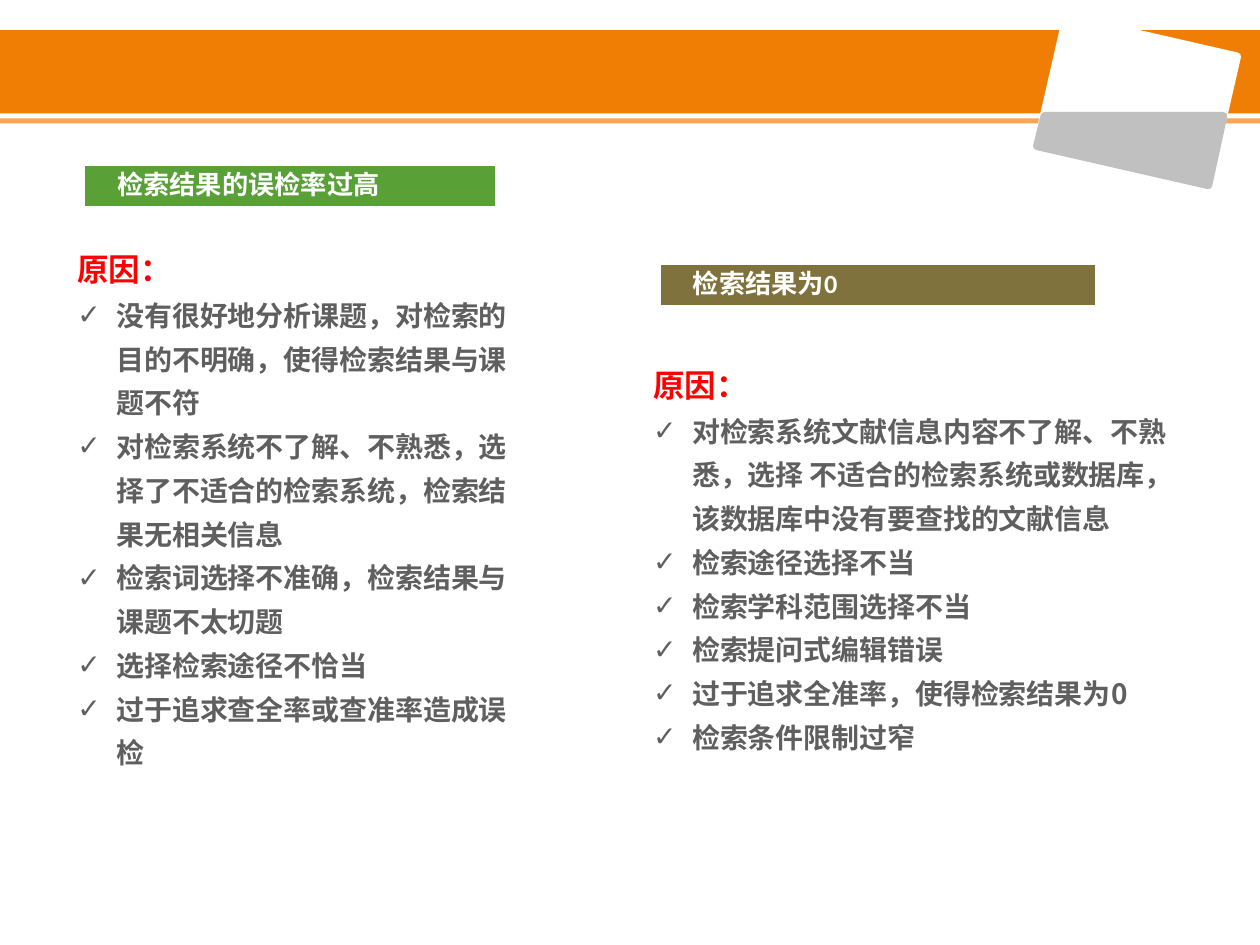
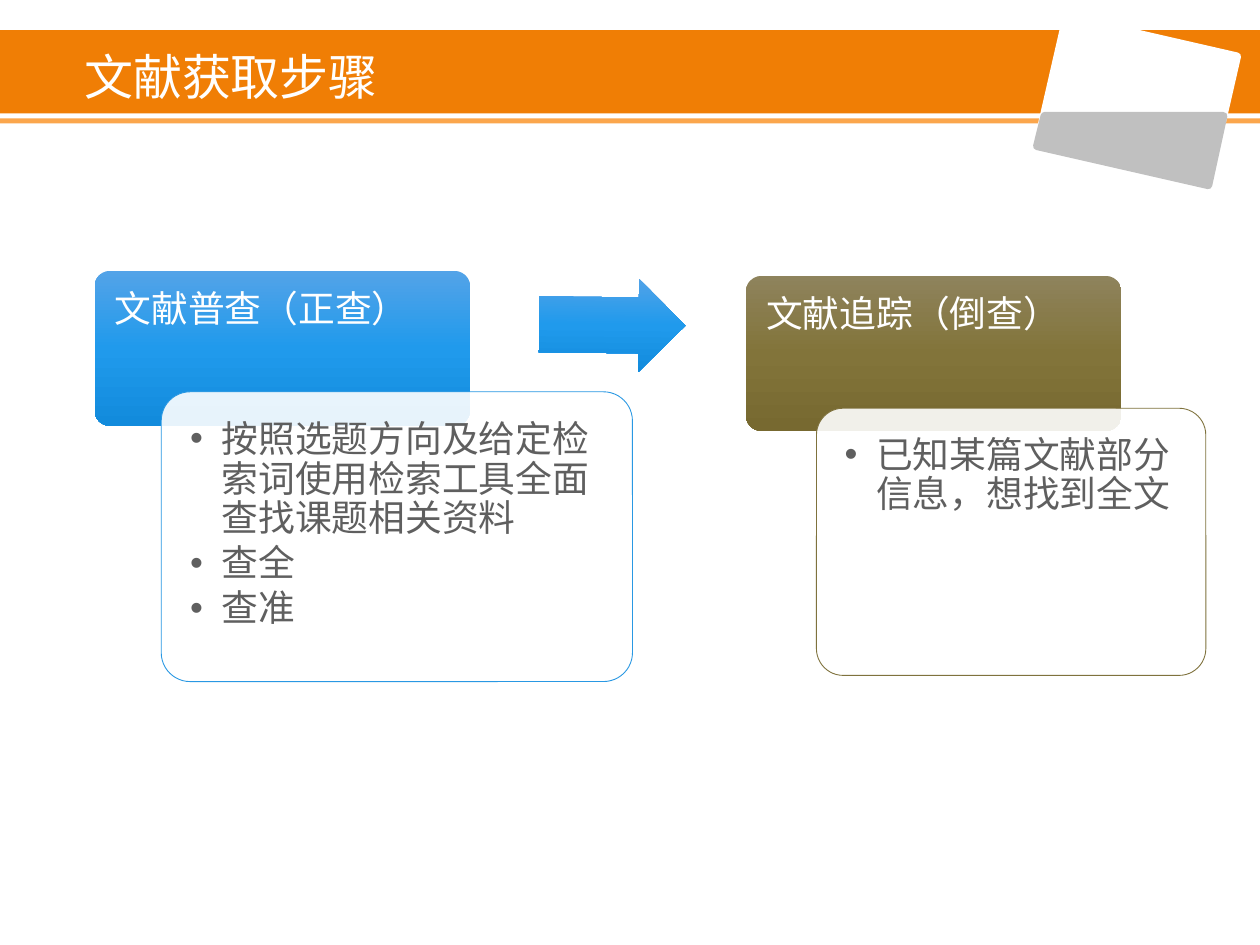
from copy import deepcopy
from lxml.etree import SubElement
from pptx import Presentation
from pptx.dml.color import RGBColor
from pptx.enum.shapes import MSO_SHAPE
from pptx.enum.text import MSO_ANCHOR, MSO_AUTO_SIZE
from pptx.oxml.ns import qn
from pptx.util import Inches, Pt

# Grid of 100 columns by 75 rows
COLS, ROWS = 100, 75
WIDE, HIGH = Inches(10), Inches(7.5)

WHITE = RGBColor(0xFF, 0xFF, 0xFF)
ORANGE = RGBColor(0xF0, 0x7E, 0x05)
PEACH = RGBColor(0xFB, 0xA6, 0x4C)
SILVER = RGBColor(0xC0, 0xC0, 0xC0)
GREEN = RGBColor(0x59, 0xA0, 0x37)
OLIVE = RGBColor(0x7F, 0x72, 0x3D)
BLUE = RGBColor(0x29, 0x98, 0xE3)
RED = RGBColor(0xFF, 0x00, 0x00)
GRAY = RGBColor(0x5F, 0x5F, 0x5F)
SKIES = [RGBColor(0x53, 0xA3, 0xE8), RGBColor(0x20, 0x9A, 0xEC),
         RGBColor(0x12, 0x8B, 0xDC)]
EARTHS = [RGBColor(0x8E, 0x83, 0x5C), RGBColor(0x82, 0x74, 0x3A),
          RGBColor(0x77, 0x69, 0x30)]

LATIN, SERIF, HAN = "Calibri", "Times New Roman", "Noto Sans CJK SC"


def place(box):
    """Turn grid columns and rows into slide lengths."""
    x, y, w, h = box
    return (round(x * WIDE / COLS), round(y * HIGH / ROWS),
            round(w * WIDE / COLS), round(h * HIGH / ROWS))


def paint(shape, fill, line=None, width=1, alpha=None):
    """Fill with one colour or a list of them, and set the outline."""
    shape.shadow.inherit = False
    if isinstance(fill, list):
        blend(shape, fill)
    else:
        shape.fill.solid()
        shape.fill.fore_color.rgb = fill
    if alpha:
        hue = shape.element.spPr.find(qn("a:solidFill"))[0]
        SubElement(hue, qn("a:alpha")).set("val", str(alpha * 1000))
    if line is None:
        shape.line.fill.background()
    else:
        shape.line.color.rgb = line
        shape.line.width = Pt(width)
    return shape


def blend(shape, hues):
    """Fill from top to bottom with evenly spaced colours."""
    shape.fill.gradient()
    shape.fill.gradient_angle = 270
    stops = shape.element.spPr.find(qn("a:gradFill")).find(qn("a:gsLst"))
    while len(stops) < len(hues):
        stops.append(deepcopy(stops[-1]))
    for i, (stop, hue) in enumerate(zip(shape.fill.gradient_stops, hues)):
        stop.color.rgb = hue
        stop.position = i / (len(hues) - 1)


def draw(slide, kind, box, fill, adjust=(), turn=0, **look):
    shape = slide.shapes.add_shape(kind, *place(box))
    for i, value in enumerate(adjust):
        shape.adjustments[i] = value
    shape.rotation = turn
    return paint(shape, fill, **look)


def frame(slide, box, inset=(1, 0.5, 1, 0.5), anchor=MSO_ANCHOR.TOP, grow=False):
    """Add an empty text box with its insets in grid units."""
    text = slide.shapes.add_textbox(*place(box)).text_frame
    text.word_wrap = True
    text.vertical_anchor = anchor
    text.auto_size = (MSO_AUTO_SIZE.SHAPE_TO_FIT_TEXT if grow
                      else MSO_AUTO_SIZE.NONE)
    left, top, right, low = (Inches(n / 10) for n in inset)
    text.margin_left, text.margin_top = left, top
    text.margin_right, text.margin_bottom = right, low
    return text


def write(text, words, size, color, font=LATIN, bold=False, lead=0.9,
          after=0, bullet=None, indent=0, level=0):
    """Add one paragraph to a text frame."""
    first = text.paragraphs[0]
    para = text.add_paragraph() if first.runs else first
    para.level = level
    para.line_spacing = lead
    para.space_after = Pt(after)
    if bullet:
        props = para._p.get_or_add_pPr()
        props.set("marL", str(Inches(indent)))
        props.set("indent", str(-Inches(indent)))
        SubElement(props, qn("a:buFont")).set("typeface", "Arial")
        SubElement(props, qn("a:buChar")).set("char", bullet)
    run = para.add_run()
    run.text = words
    run.font.size, run.font.bold = Pt(size), bold
    run.font.name, run.font.color.rgb = font, color
    SubElement(run._r.get_or_add_rPr(), qn("a:ea")).set("typeface", HAN)


def banner(slide, title=None):
    """Draw the shared header, with its title if there is one."""
    draw(slide, MSO_SHAPE.RECTANGLE, (0, 9.4, COLS, 0.4), PEACH)
    draw(slide, MSO_SHAPE.PENTAGON, (0, 2.4, COLS, 6.6), ORANGE, adjust=[0])
    # Tilted tile and its lower half
    draw(slide, MSO_SHAPE.RECTANGLE, (83.3, 2.8, 13.9, 10.4), WHITE,
         turn=12.9, line=WHITE, width=4.5)
    edge = [place((x, y, 0, 0))[:2] for x, y in
            ((82.9, 9.2), (97.1, 9.2), (95.9, 14.7), (82.3, 11.6))]
    half = slide.shapes.build_freeform(*edge[0])
    half.add_line_segments(edge[1:], close=True)
    paint(half.convert_to_shape(), SILVER, line=SILVER, width=4.5)
    if title:
        text = frame(slide, (5.7, 2.3, 75.6, 6.6), anchor=MSO_ANCHOR.BOTTOM)
        write(text, title, 28, WHITE, font=SERIF)


def column(slide, box, fill, label, drop, body, causes):
    """Draw a label bar and, below it, a list of causes."""
    x, y, w, h = box
    draw(slide, MSO_SHAPE.RECTANGLE, box, fill, line=WHITE)
    bar = frame(slide, box, (2.6, 0.4, 0.4, 0.4), MSO_ANCHOR.MIDDLE)
    write(bar, label, 15, WHITE, bold=True)
    text = frame(slide, (x - 1.55, y + drop, *body), grow=True)
    write(text, "原因：", 18, RED, bold=True, lead=Pt(25))
    for cause in causes:
        write(text, cause, 16, GRAY, font=HAN, bold=True, lead=Pt(25),
              bullet="✓", indent=0.31)


def card(slide, box, fill, label, shift, body, line, items):
    """Draw a title card with a detail card overlapping it."""
    x, y, w, h = box
    draw(slide, MSO_SHAPE.ROUNDED_RECTANGLE, box, fill, adjust=[0.1])
    head = frame(slide, (x, y, w, h * 2 / 3), (1.6, 1.6, 1.6, 0.9))
    write(head, label, 21, WHITE)
    # Detail card, with its text kept inside the round corners
    left, top = x + shift[0], y + shift[1]
    wide, high = body
    draw(slide, MSO_SHAPE.ROUNDED_RECTANGLE, (left, top, wide, high), WHITE,
         adjust=[0.1], line=line, width=0.5, alpha=90)
    pad = 0.03 * high
    text = frame(slide, (left + pad, top + pad, wide - 2 * pad, high - 2 * pad),
                 (1.6,) * 4)
    for item in items:
        write(text, item, 21, GRAY, after=3, bullet="•", indent=0.25, level=1)


def faults(slide):
    banner(slide)
    column(slide, (6.7, 13.1, 32.7, 3.3), GREEN, "检索结果的误检率过高",
           5.8, (37.8, 43.1), (
               "没有很好地分析课题，对检索的目的不明确，使得检索结果与课题不符",
               "对检索系统不了解、不熟悉，选择了不适合的检索系统，检索结果无相关信息",
               "检索词选择不准确，检索结果与课题不太切题",
               "选择检索途径不恰当",
               "过于追求查全率或查准率造成误检"))
    column(slide, (52.4, 21, 34.6, 3.3), OLIVE, "检索结果为0",
           7.1, (43.3, 32.3), (
               "对检索系统文献信息内容不了解、不熟悉，选择 不适合的检索系统或数据库，"
               "该数据库中没有要查找的文献信息",
               "检索途径选择不当",
               "检索学科范围选择不当",
               "检索提问式编辑错误",
               "过于追求全准率，使得检索结果为0",
               "检索条件限制过窄"))


def steps(slide):
    banner(slide, "文献获取步骤")
    card(slide, (7.5, 21.5, 29.8, 12.3), SKIES, "文献普查（正查）",
         (5.3, 9.6), (37.4, 23), BLUE,
         ("按照选题方向及给定检索词使用检索工具全面查找课题相关资料",
          "查全", "查准"))
    draw(slide, MSO_SHAPE.RIGHT_ARROW, (42.8, 22.1, 11.6, 7.4), SKIES,
         adjust=[0.6, 0.5], turn=0.5)
    card(slide, (59.2, 21.9, 29.8, 12.3), EARTHS, "文献追踪（倒查）",
         (5.6, 10.5), (30.9, 21.2), OLIVE,
         ("已知某篇文献部分信息，想找到全文",))


def main():
    deck = Presentation()
    deck.slide_width, deck.slide_height = WIDE, HIGH
    for build in (faults, steps):
        build(deck.slides.add_slide(deck.slide_layouts[6]))
    deck.save("out.pptx")


if __name__ == "__main__":
    main()
